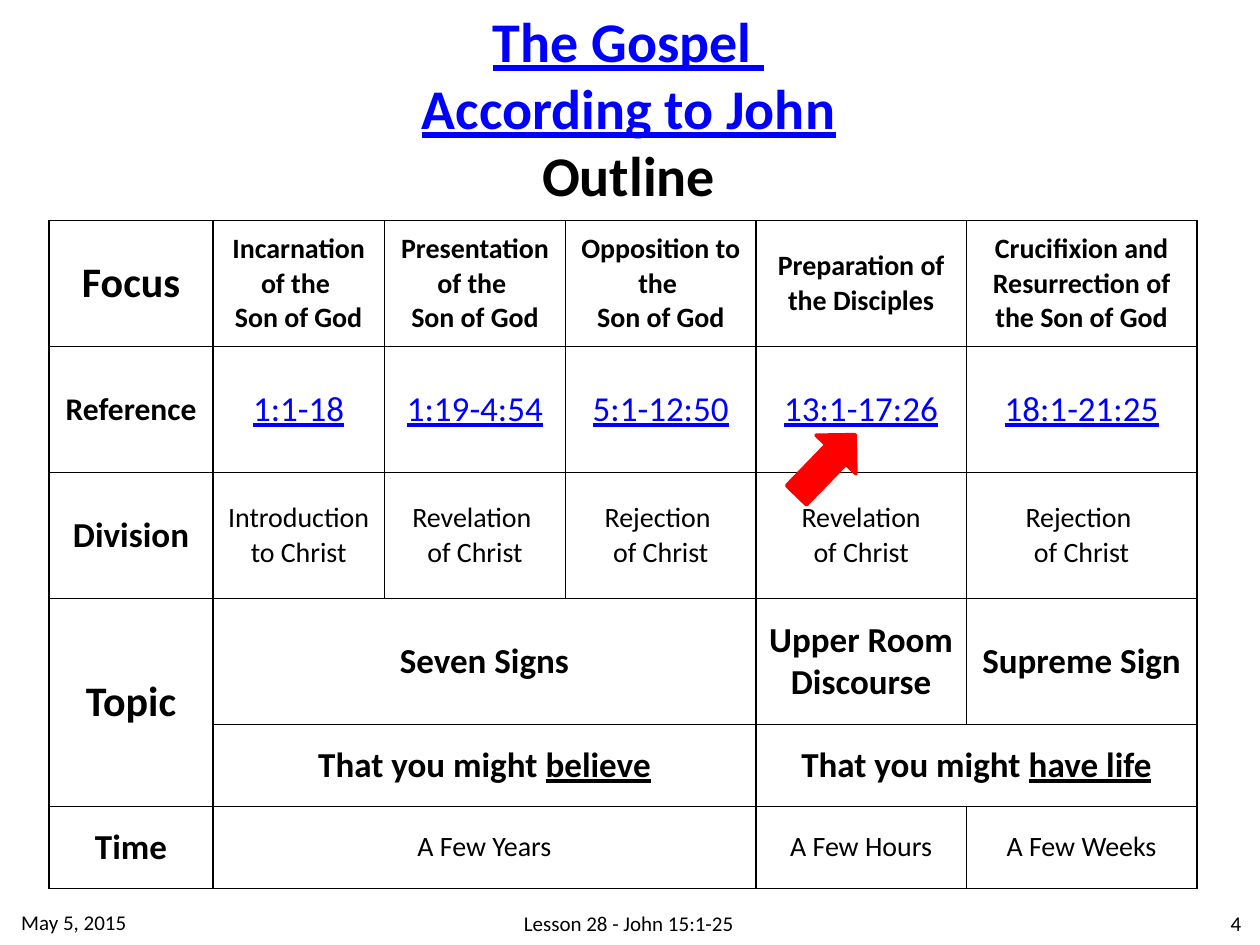
import pptx
import pptx.dml.color
import pptx.enum.shapes
import pptx.enum.text
import pptx.oxml
import pptx.oxml.ns
import pptx.util

PX = 9144
FONT = "Calibri"
COLORS = {"black": "000000", "link": "0000FF", "arrow": "FF0000"}
ALIGN = pptx.enum.text.PP_ALIGN
ANCHOR = pptx.enum.text.MSO_ANCHOR

TITLE = "_The Gospel _\n_According to John_\nOutline"
COLUMNS = [130, 136, 144, 151, 167, 183]
ROWS = [100, 100, 100, 100, 65, 65]
HEAD = {"size": 24, "bold": True}
LABEL = {"size": 20, "bold": True}
FOCUS = {"size": 16, "bold": True}
PLAIN = {"size": 16}
LINK = {"size": 20, "marked": "link"}

# Each entry holds column, text, format and the rows and columns it spans.
OUTLINE = [
    [(0, "Focus", HEAD, 1, 1),
     (1, "Incarnation of the \nSon of God", FOCUS, 1, 1),
     (2, "Presentation of the \nSon of God", FOCUS, 1, 1),
     (3, "Opposition to the \nSon of God", FOCUS, 1, 1),
     (4, "Preparation of the Disciples", FOCUS, 1, 1),
     (5, "Crucifixion and Resurrection of the Son of God", FOCUS, 1, 1)],
    [(0, "Reference", {"size": 18, "bold": True}, 1, 1),
     (1, "_1:1-18_", LINK, 1, 1),
     (2, "_1:19-4:54_", LINK, 1, 1),
     (3, "_5:1-12:50_", LINK, 1, 1),
     (4, "_13:1-17:26_", LINK, 1, 1),
     (5, "_18:1-21:25_", LINK, 1, 1)],
    [(0, "Division", LABEL, 1, 1),
     (1, "Introduction to Christ", PLAIN, 1, 1),
     (2, "Revelation \nof Christ", PLAIN, 1, 1),
     (3, "Rejection \nof Christ", PLAIN, 1, 1),
     (4, "Revelation\nof Christ", PLAIN, 1, 1),
     (5, "Rejection \nof Christ", PLAIN, 1, 1)],
    [(0, "Topic", HEAD, 2, 1),
     (1, "Seven Signs", LABEL, 1, 3),
     (4, "Upper Room Discourse", LABEL, 1, 1),
     (5, "Supreme Sign", LABEL, 1, 1)],
    [(1, "That you might _believe_", LABEL, 1, 3),
     (4, "That you might _have life_", LABEL, 1, 2)],
    [(0, "Time", LABEL, 1, 1),
     (1, "A Few Years", PLAIN, 1, 3),
     (4, "A Few Hours", PLAIN, 1, 1),
     (5, "A Few Weeks", PLAIN, 1, 1)],
]


def lengths(*values):
    """Turn px values into EMU."""
    return [pptx.util.Emu(value * PX) for value in values]


def color(name):
    """Look up a named colour."""
    return pptx.dml.color.RGBColor.from_string(COLORS[name])


def write(frame, text, size, bold=False, align=ALIGN.CENTER, marked="black"):
    """Write lines of text, underlining what stands between underscores."""
    for number, line in enumerate(text.split("\n")):
        para = frame.add_paragraph() if number else frame.paragraphs[0]
        para.alignment = align
        for index, part in enumerate(line.split("_")):
            if not part:
                continue
            underlined = index % 2 == 1
            span = para.add_run()
            span.text = part
            span.font.name = FONT
            span.font.size = pptx.util.Pt(size)
            span.font.bold = bold
            span.font.underline = underlined
            span.font.color.rgb = color(marked if underlined else "black")


def add_title(page):
    """Place the title in its placeholder."""
    box = page.shapes.title
    box.left, box.top, box.width, box.height = lengths(318, 0, 362, 172)
    frame = box.text_frame
    frame.word_wrap = False
    frame.auto_size = pptx.enum.text.MSO_AUTO_SIZE.SHAPE_TO_FIT_TEXT
    frame.vertical_anchor = ANCHOR.TOP
    write(frame, TITLE, size=32, bold=True, marked="link")


def set_borders(cell):
    """Draw a thin line on all four sides of a cell."""
    properties = cell._tc.get_or_add_tcPr()
    for index, side in enumerate("LRTB"):
        properties.insert(index, pptx.oxml.parse_xml(
            f'<a:ln{side} {pptx.oxml.ns.nsdecls("a")} w="12700"><a:solidFill>'
            f'<a:srgbClr val="{COLORS["black"]}"/></a:solidFill></a:ln{side}>'))


def add_outline(page):
    """Add the outline table with its merged cells."""
    area = lengths(39, 175, sum(COLUMNS), sum(ROWS))
    table = page.shapes.add_table(len(ROWS), len(COLUMNS), *area).table
    table.first_row = table.horz_banding = False
    for column, width in zip(table.columns, lengths(*COLUMNS)):
        column.width = width
    for row, height in zip(table.rows, lengths(*ROWS)):
        row.height = height
    for cell in table.iter_cells():
        cell.fill.background()
        set_borders(cell)
    for row, entries in enumerate(OUTLINE):
        for column, text, style, down, across in entries:
            cell = table.cell(row, column)
            if down * across > 1:
                cell.merge(table.cell(row + down - 1, column + across - 1))
            cell.vertical_anchor = ANCHOR.MIDDLE
            write(cell.text_frame, text, **style)


def add_arrow(page):
    """Add the arrow that points at the current section."""
    kind = pptx.enum.shapes.MSO_SHAPE.RIGHT_ARROW
    arrow = page.shapes.add_shape(kind, *lengths(622, 347, 67, 44))
    arrow.rotation = 314.1
    arrow.shadow.inherit = False
    arrow.fill.solid()
    arrow.fill.fore_color.rgb = color("arrow")
    arrow.line.color.rgb = color("arrow")
    arrow.line.width = pptx.util.Pt(2)


def add_footer(page, text, left, top, width, align):
    """Add one piece of the footer."""
    frame = page.shapes.add_textbox(*lengths(left, top, width, 40)).text_frame
    frame.word_wrap = True
    frame.vertical_anchor = ANCHOR.MIDDLE
    write(frame, text, size=12, align=align)


def main():
    """Build the slide and save it."""
    deck = pptx.Presentation()
    deck.slide_width, deck.slide_height = lengths(1000, 750)
    page = deck.slides.add_slide(deck.slide_layouts.get_by_name("Title Only"))
    add_title(page)
    add_outline(page)
    add_arrow(page)
    add_footer(page, "Lesson 28 - John 15:1-25", 228, 713, 542, ALIGN.CENTER)
    add_footer(page, "4", 920, 713, 75, ALIGN.RIGHT)
    add_footer(page, "May 5, 2015", 7, 712, 158, ALIGN.LEFT)
    deck.save("out.pptx")


if __name__ == "__main__":
    main()
